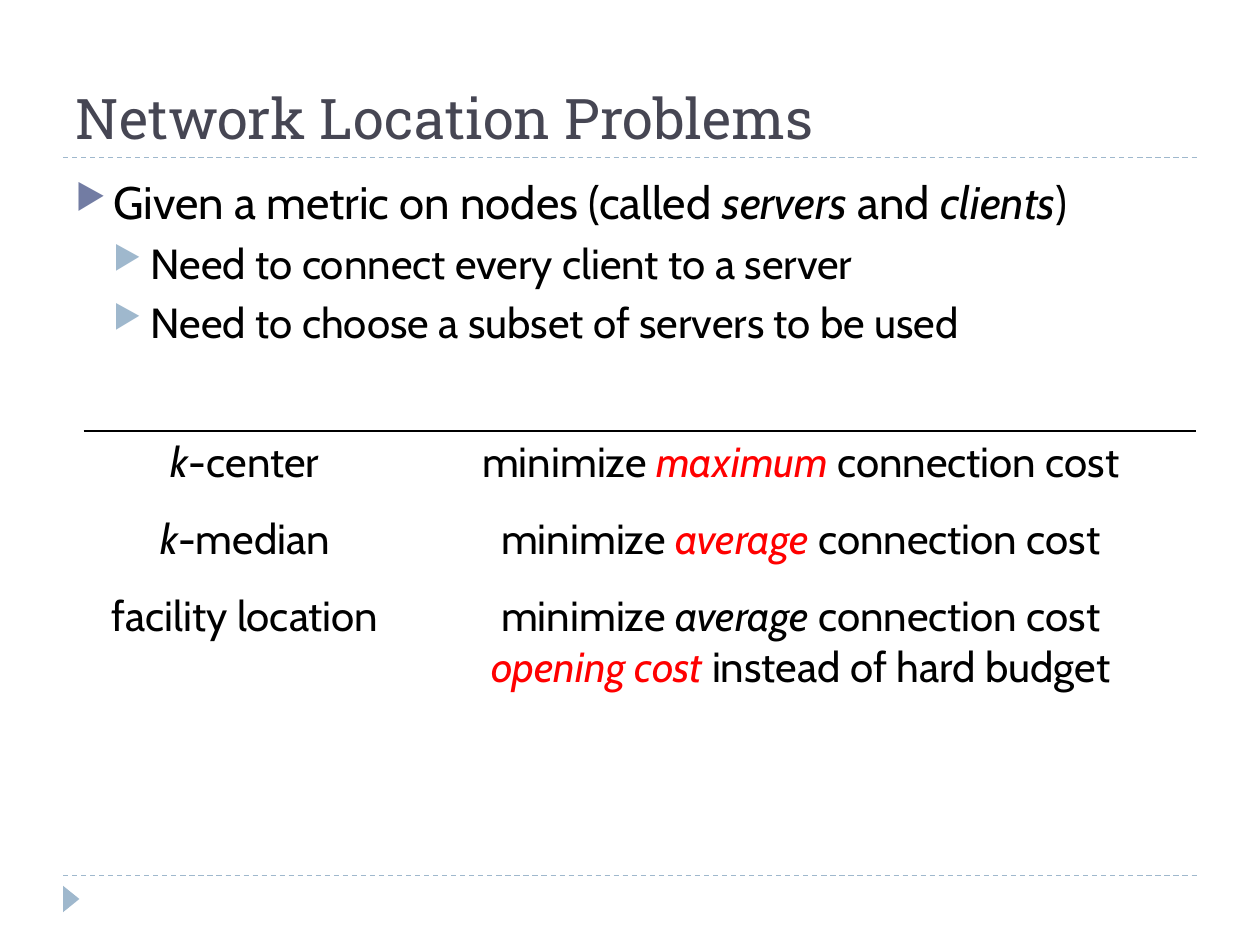
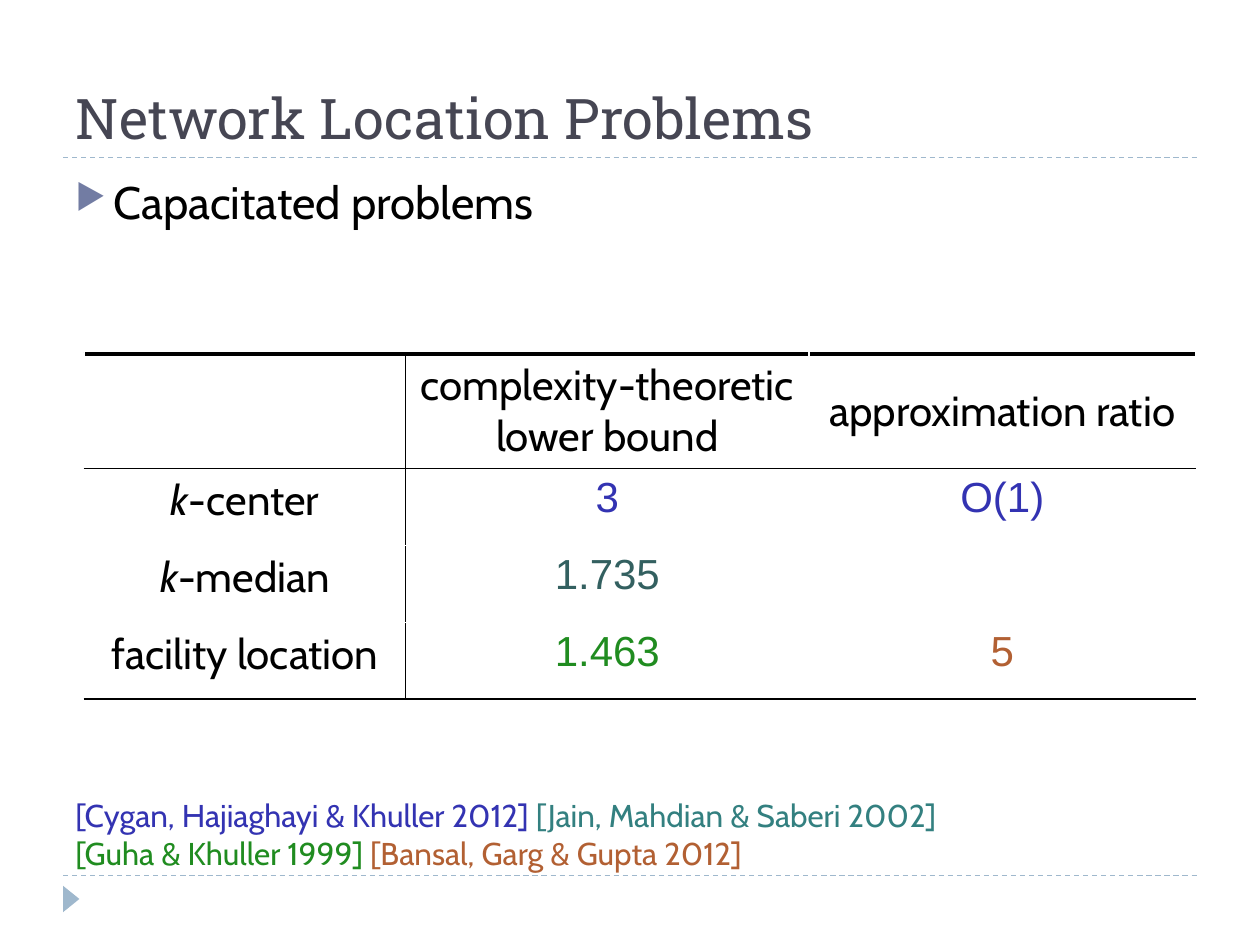
from lxml import etree
from pptx import Presentation
from pptx.dml.color import RGBColor
from pptx.enum.dml import MSO_LINE
from pptx.enum.shapes import MSO_CONNECTOR, MSO_SHAPE
from pptx.enum.text import MSO_ANCHOR, MSO_AUTO_SIZE, PP_ALIGN
from pptx.oxml.ns import qn
from pptx.util import Inches, Pt

DASH = MSO_LINE.DASH
STRAIGHT = MSO_CONNECTOR.STRAIGHT
TRIANGLE = MSO_SHAPE.ISOSCELES_TRIANGLE
BOTTOM, MIDDLE = MSO_ANCHOR.BOTTOM, MSO_ANCHOR.MIDDLE
LEFT, CENTER = PP_ALIGN.LEFT, PP_ALIGN.CENTER
FIXED = MSO_AUTO_SIZE.NONE

BLACK = RGBColor(0x00, 0x00, 0x00)
SLATE = RGBColor(0x46, 0x46, 0x53)
VIOLET = RGBColor(0x72, 0x7C, 0xA3)
SKY = RGBColor(0x9F, 0xB8, 0xCD)
RED = RGBColor(0xFF, 0x00, 0x00)
BLUE = RGBColor(0x33, 0x33, 0xB2)
PINE = RGBColor(0x33, 0x60, 0x60)
TEAL = RGBColor(0x33, 0x80, 0x80)
GREEN = RGBColor(0x20, 0x8C, 0x20)
RUST = RGBColor(0xB2, 0x60, 0x33)

SERIF, SANS, PLAIN = "Roboto Slab", "Cabin", "Arial"
TITLE = "Network Location Problems"
COLS = (2.55, 3.2, 3.07)
ROW, TALL = 0.61, 0.91
LEVELS = ((26, 6, VIOLET), (24, 5, SKY))


def part(text, color=BLACK, italic=False, font=SANS):
    """Describe one run of text."""
    return text, color, italic, font


def slant(text, color=BLACK):
    """Describe an italic run."""
    return part(text, color, True)


NAMES = (
    [slant("k"), part("-center")],
    [slant("k"), part("-median")],
    [part("facility location")],
)


def write(frame, lines, size, align=LEFT):
    """Fill a text frame with lines made of parts."""
    for i, line in enumerate(lines):
        para = frame.paragraphs[0] if i == 0 else frame.add_paragraph()
        para.alignment = align
        for text, color, italic, font in line:
            run = para.add_run()
            run.text = text
            run.font.size = Pt(size)
            run.font.name = font
            run.font.italic = italic
            run.font.color.rgb = color


def add_box(slide, box, lines, size):
    """Add a wrapping text box and return its frame."""
    frame = slide.shapes.add_textbox(*map(Inches, box)).text_frame
    frame.word_wrap = True
    write(frame, lines, size)
    return frame


def bullet(para, level):
    """Give a paragraph the bullet, indent and size of its level."""
    size, gap, color = LEVELS[level]
    para.level = level
    para.space_before = Pt(gap)
    for run in para.runs:
        run.font.size = Pt(size)
    props = para._p.get_or_add_pPr()
    props.set("marL", str(Inches(0.3 * (level + 1))))
    props.set("indent", str(Inches(-0.3)))
    tint = etree.SubElement(props, qn("a:buClr"))
    etree.SubElement(tint, qn("a:srgbClr"), val=str(color))
    etree.SubElement(props, qn("a:buSzPct"), val="76000")
    etree.SubElement(props, qn("a:buChar"), char="▶")


def add_body(slide, lines):
    """Add the bullet list: the first line on top, the rest below it."""
    frame = add_box(slide, (0.5, 1.33, 9, 5.4), lines, 24)
    for i, para in enumerate(frame.paragraphs):
        bullet(para, min(i, 1))


def add_rule(slide, left, top, width):
    """Draw a dashed level line."""
    line = slide.shapes.add_connector(
        STRAIGHT, *map(Inches, (left, top, left + width, top)))
    line.line.color.rgb = SKY
    line.line.width = Pt(0.75)
    line.line.dash_style = DASH
    etree.SubElement(line._element.spPr, qn("a:effectLst"))


def add_slide(deck):
    """Add a slide with its title, two rules and corner mark."""
    slide = deck.slides.add_slide(deck.slide_layouts[5])
    for top in (6.95, 1.25):
        add_rule(slide, 0.5, top, 9)
    mark = slide.shapes.add_shape(
        TRIANGLE, *map(Inches, (0.46, 7.07, 0.21, 0.13)))
    mark.rotation = 90
    mark.shadow.inherit = False
    mark.fill.solid()
    mark.fill.fore_color.rgb = SKY
    mark.line.fill.background()
    title = slide.shapes.title
    title.left, title.top, title.width, title.height = map(
        Inches, (0.5, 0.17, 9, 1.08))
    frame = title.text_frame
    frame.auto_size = FIXED
    frame.vertical_anchor = BOTTOM
    write(frame, [[part(TITLE, SLATE, font=SERIF)]], 32)
    return slide


def add_grid(slide, left, top, rows):
    """Add a clear table with the shared columns and given row heights."""
    box = map(Inches, (left, top, sum(COLS), sum(rows)))
    grid = slide.shapes.add_table(len(rows), len(COLS), *box).table
    grid.first_row = grid.horz_banding = False
    for col, width in zip(grid.columns, COLS):
        col.width = Inches(width)
    for row, height in zip(grid.rows, rows):
        row.height = Inches(height)
    for i, name in enumerate(NAMES, 1):
        write(grid.cell(i, 0).text_frame, [name], 24, CENTER)
    return grid


def edge(cells, side, width=1):
    """Draw a black border on one side of each cell."""
    for cell in cells:
        props = cell._tc.get_or_add_tcPr()
        line = etree.SubElement(
            props, qn("a:ln" + side), w=str(Pt(width)))
        fill = etree.SubElement(line, qn("a:solidFill"))
        etree.SubElement(fill, qn("a:srgbClr"), val=str(BLACK))


def clear(grid):
    """Take the fill from every cell."""
    for cell in grid.iter_cells():
        cell.fill.background()


def add_goals(slide, left, top):
    """Add the table of problems and their goals."""
    grid = add_grid(slide, left, top, (ROW, ROW, ROW, TALL))
    edge(grid.rows[0].cells, "B")
    edge(grid.rows[1].cells, "T")
    clear(grid)
    head, tail = part("minimize "), part(" connection cost")
    goals = (
        [[head, slant("maximum", RED), tail]],
        [[head, slant("average", RED), tail]],
        [[head, slant("average"), tail],
         [slant("opening cost", RED), part(" instead of hard budget")]],
    )
    for i, goal in enumerate(goals, 1):
        cell = grid.cell(i, 1)
        cell.merge(grid.cell(i, 2))
        write(cell.text_frame, goal, 24, CENTER)


def add_bounds(slide, left, top):
    """Add the table of lower bounds and ratios."""
    grid = add_grid(slide, left, top, (TALL, ROW, ROW, ROW))
    rows = [list(row.cells) for row in grid.rows]
    edge([row[1] for row in rows], "L")
    edge([row[0] for row in rows], "R")
    edge(rows[0], "T", 2.25)
    edge(rows[1], "T")
    edge(rows[0] + rows[-1], "B")
    clear(grid)
    heads = (("complexity-theoretic", "lower bound"),
             ("approximation ratio",))
    for cell, head in zip(rows[0][1:], heads):
        write(cell.text_frame, [[part(text)] for text in head], 24, CENTER)
    rows[0][2].vertical_anchor = MIDDLE
    facts = ((1, 1, "3", BLUE), (1, 2, "O(1)", BLUE), (2, 1, "1.735", PINE),
             (3, 1, "1.463", GREEN), (3, 2, "5", RUST))
    for i, j, text, color in facts:
        line = [part(text, color, font=PLAIN)]
        write(rows[i][j].text_frame, [line], 24, CENTER)


def add_goal_slide(deck):
    """Build the slide that states the problems."""
    slide = add_slide(deck)
    add_body(slide, [
        [part("Given a metric on nodes (called "), slant("servers"),
         part(" and "), slant("clients"), part(")")],
        [part("Need to connect every client to a server")],
        [part("Need to choose a subset of servers to be used")],
    ])
    add_goals(slide, 0.67, 2.81)


def add_bound_slide(deck):
    """Build the slide on problems with capacities."""
    slide = add_slide(deck)
    add_body(slide, [[part("Capacitated problems")]])
    add_bounds(slide, 0.67, 2.81)
    add_box(slide, (0.5, 6.27, 9, 0.71), [
        [part("[Cygan, Hajiaghayi & Khuller 2012] ", BLUE),
         part("[Jain, Mahdian & Saberi 2002]", TEAL)],
        [part("[Guha & Khuller 1999] ", GREEN),
         part("[Bansal, Garg & Gupta 2012]", RUST)],
    ], 18)


def main():
    """Build and save the deck."""
    deck = Presentation()
    deck.slide_width, deck.slide_height = Inches(10), Inches(7.5)
    add_goal_slide(deck)
    add_bound_slide(deck)
    deck.save("out.pptx")


if __name__ == "__main__":
    main()
